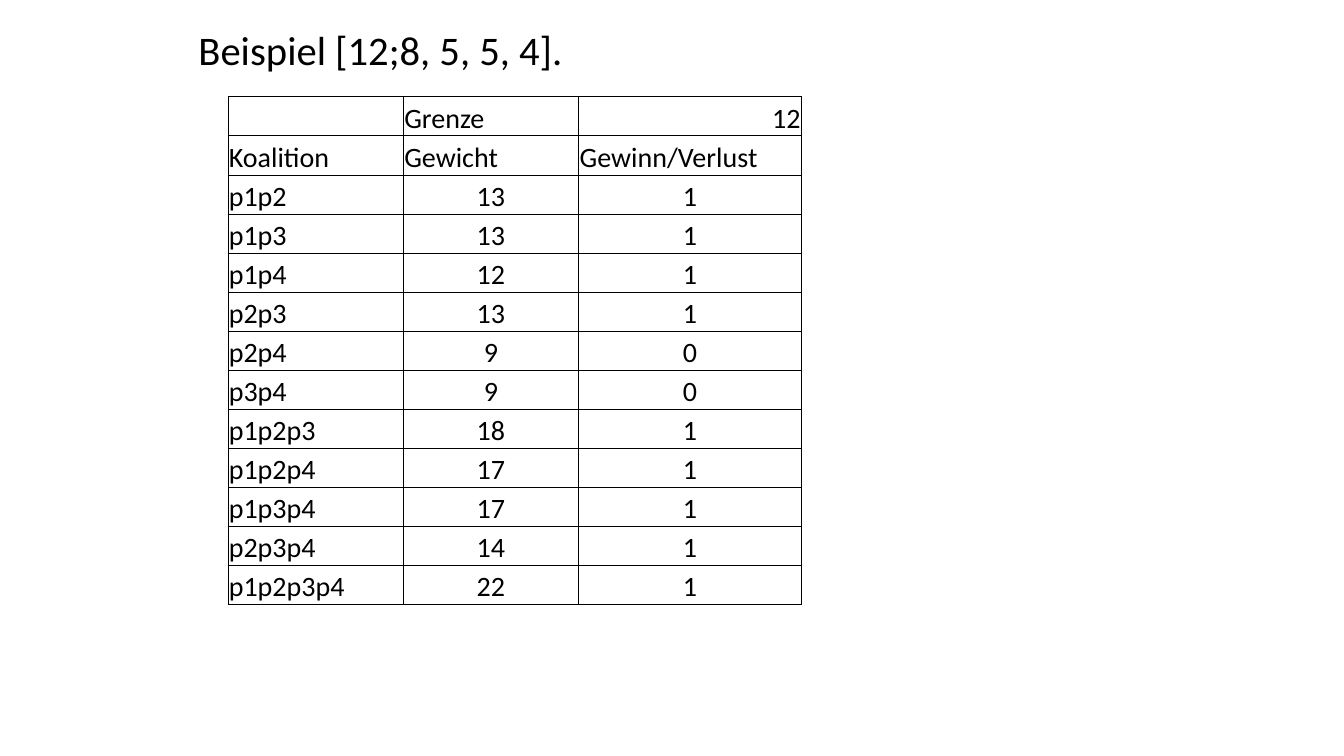
"""Build the slide listing the winning and losing coalitions of a weighted voting game."""
from lxml import etree
from pptx import Presentation
from pptx.dml.color import RGBColor
from pptx.enum.text import MSO_ANCHOR, PP_ALIGN
from pptx.oxml.ns import qn
from pptx.util import Inches, Pt

LEFT, CENTER, RIGHT = PP_ALIGN.LEFT, PP_ALIGN.CENTER, PP_ALIGN.RIGHT
BOTTOM = MSO_ANCHOR.BOTTOM
BLACK = RGBColor(0, 0, 0)
FONT = "Calibri"
TABLE_HEIGHT = 5.04
COLUMN_WIDTHS = [1.74, 1.74, 2.21]
QUOTA = 12
COALITION_WEIGHTS = [
    ("p1p2", 13), ("p1p3", 13), ("p1p4", 12), ("p2p3", 13),
    ("p2p4", 9), ("p3p4", 9), ("p1p2p3", 18), ("p1p2p4", 17),
    ("p1p3p4", 17), ("p2p3p4", 14), ("p1p2p3p4", 22),
]


def add_run(paragraph, text, size):
    run = paragraph.add_run()
    run.text = text
    run.font.name = FONT
    run.font.size = Pt(size)
    run.font.color.rgb = BLACK


def add_borders(cell):
    properties = cell._tc.get_or_add_tcPr()
    for side in ("lnL", "lnR", "lnT", "lnB"):
        border = etree.SubElement(properties, qn(f"a:{side}"), w=str(Pt(0.5)))
        fill = etree.SubElement(border, qn("a:solidFill"))
        etree.SubElement(fill, qn("a:srgbClr"), val=str(BLACK))


presentation = Presentation()
presentation.slide_width = Inches(13.33)
presentation.slide_height = Inches(7.5)
slide = presentation.slides.add_slide(presentation.slide_layouts[6])

heading = slide.shapes.add_textbox(Inches(1.87), Inches(0.2), Inches(7.39), Inches(0.57))
heading.text_frame.word_wrap = True
add_run(heading.text_frame.paragraphs[0], "Beispiel [12;8, 5, 5, 4].", 29)

rows = [
    (("", "Grenze", str(QUOTA)), (LEFT, LEFT, RIGHT)),
    (("Koalition", "Gewicht", "Gewinn/Verlust"), (LEFT, LEFT, LEFT)),
]
for coalition, weight in COALITION_WEIGHTS:
    outcome = "1" if weight >= QUOTA else "0"
    rows.append(((coalition, str(weight), outcome), (LEFT, CENTER, CENTER)))

coalitions = slide.shapes.add_table(
    len(rows), len(COLUMN_WIDTHS), Inches(2.26), Inches(0.96),
    Inches(sum(COLUMN_WIDTHS)), Inches(TABLE_HEIGHT),
).table
coalitions.first_row = False
coalitions.horz_banding = False
for column, width in zip(coalitions.columns, COLUMN_WIDTHS):
    column.width = Inches(width)

for row, (texts, alignments) in zip(coalitions.rows, rows):
    row.height = Inches(TABLE_HEIGHT / len(rows))
    for cell, text, alignment in zip(row.cells, texts, alignments):
        cell.margin_left = cell.margin_right = cell.margin_top = Inches(0.01)
        cell.margin_bottom = 0
        cell.vertical_anchor = BOTTOM
        add_borders(cell)
        cell.fill.background()
        if text:
            paragraph = cell.text_frame.paragraphs[0]
            paragraph.alignment = alignment
            add_run(paragraph, text, 20)

presentation.save("out.pptx")
